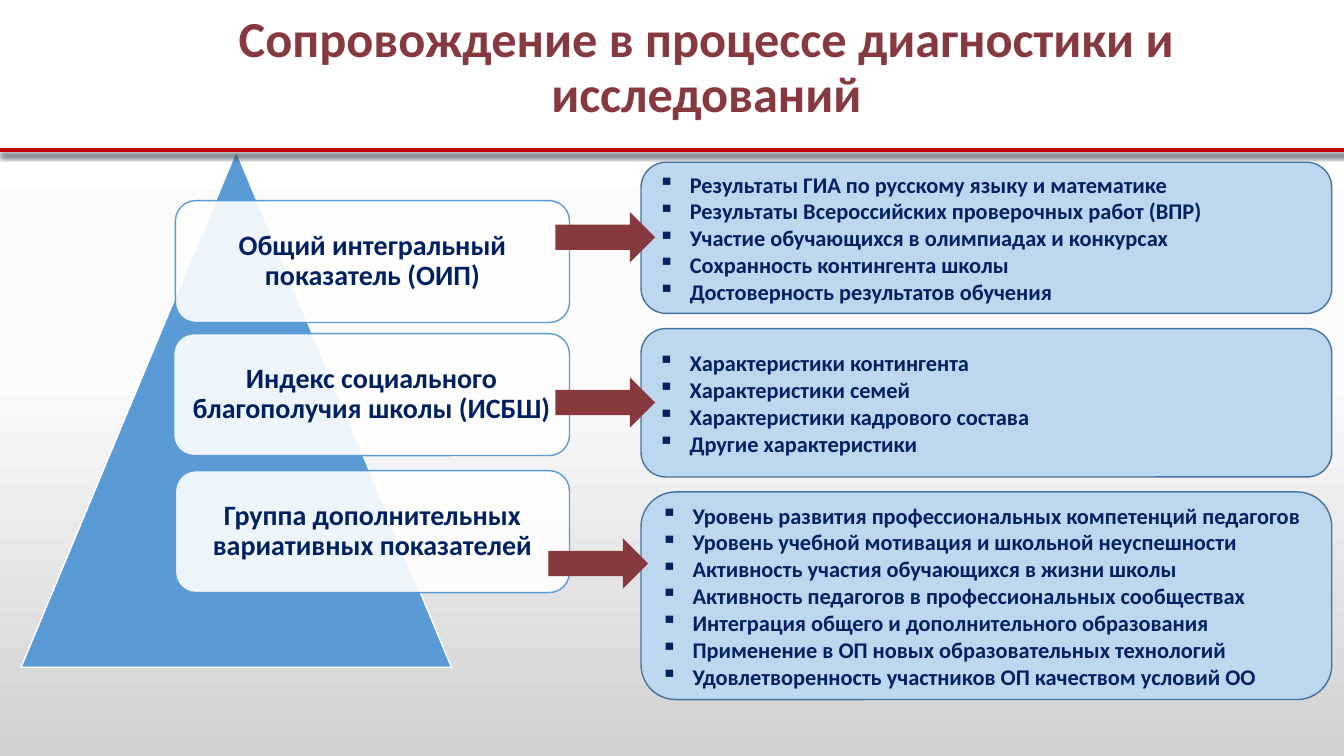
import copy
from dataclasses import dataclass

import pptx
import pptx.dml.color
import pptx.enum.shapes
import pptx.enum.text
import pptx.oxml
import pptx.oxml.ns
import pptx.util

Pt = pptx.util.Pt
SHAPE = pptx.enum.shapes.MSO_SHAPE
ALIGN = pptx.enum.text.PP_ALIGN
rgb = pptx.dml.color.RGBColor.from_string


@dataclass(frozen=True)
class Theme:
    font: str = "Calibri"
    maroon: str = "873940"
    navy: str = "002060"
    blue: str = "5B9BD5"
    white: str = "FFFFFF"
    panel: str = "BDD7EE"
    panel_edge: str = "43739E"
    rule: str = "C00000"
    rule_shadow: str = "333F50"
    backdrop: tuple = ((0, "FFFFFF"), (0.5, "FBFBFB"), (1, "D1D1D1"))
    title_size: int = 36
    card_size: int = 20
    list_size: int = 16


theme = Theme()


def write_text(frame, text, *, size, color, align=ALIGN.LEFT, spacing=1.0, bullet=None):
    """Fill the frame with bold text, one paragraph per line."""
    frame.word_wrap = True
    frame.auto_size = pptx.enum.text.MSO_AUTO_SIZE.NONE
    frame.vertical_anchor = pptx.enum.text.MSO_ANCHOR.MIDDLE
    frame.text = text
    for paragraph in frame.paragraphs:
        paragraph.alignment = align
        paragraph.line_spacing = spacing
        font = paragraph.runs[0].font
        font.name, font.size, font.bold = theme.font, Pt(size), True
        font.color.rgb = rgb(color)
        if bullet:
            properties = paragraph._p.get_or_add_pPr()
            properties.set("marL", str(Pt(22.5)))
            properties.set("indent", str(-Pt(22.5)))
            mark = pptx.oxml.parse_xml(
                f'<a:buChar {pptx.oxml.ns.nsdecls("a")} char="{bullet}"/>')
            properties.append(mark)


def add_figure(kind, left, top, width, height, fill, edge=None):
    figure = slide.shapes.add_shape(kind, Pt(left), Pt(top), Pt(width), Pt(height))
    figure.shadow.inherit = False
    figure.fill.solid()
    figure.fill.fore_color.rgb = rgb(fill)
    if edge:
        figure.line.color.rgb = rgb(edge)
        figure.line.width = Pt(1)
    else:
        figure.line.fill.background()
    return figure


deck = pptx.Presentation()
deck.slide_width, deck.slide_height = Pt(960), Pt(540)
slide = deck.slides.add_slide(deck.slide_layouts[5])

# Background gradient
backdrop = slide.background.fill
backdrop.gradient()
backdrop.gradient_angle = 270
stop_list = slide.element.xpath("//p:bg//a:gsLst")[0]
stop_list.append(copy.deepcopy(stop_list[0]))
for stop, (position, color) in zip(backdrop.gradient_stops, theme.backdrop):
    stop.position = position
    stop.color.rgb = rgb(color)

# Title
title = slide.shapes.title
title.left, title.top, title.width, title.height = Pt(121.7), Pt(13), Pt(766), Pt(72)
write_text(title.text_frame, "Сопровождение в процессе диагностики и исследований",
           size=theme.title_size, color=theme.maroon, align=ALIGN.CENTER, spacing=0.9)

# Pyramid, with an indicator card, an arrow and a detail panel on each level
add_figure(SHAPE.ISOSCELES_TRIANGLE, 15.1, 108, 307.4, 368.6, theme.blue, theme.white)

CARD_RIGHT, CARD_HEIGHT = 406.8, 87.1
levels = [
    # card text, card left, card top, panel top, panel height, arrow left, arrow top, details
    ("Общий интегральный показатель (ОИП)", 125.3, 143.3, 115.9, 108, 396.7, 151.5, [
        "Результаты ГИА по русскому языку и математике",
        "Результаты Всероссийских проверочных работ (ВПР)",
        "Участие обучающихся в олимпиадах и конкурсах",
        "Сохранность контингента школы",
        "Достоверность результатов обучения",
    ]),
    ("Индекс социального благополучия школы (ИСБШ)", 124, 238.3, 234.7, 106, 396.7, 269.5, [
        "Характеристики контингента",
        "Характеристики семей",
        "Характеристики кадрового состава",
        "Другие характеристики",
    ]),
    ("Группа дополнительных вариативных показателей", 125.3, 336.2, 351.4, 148.3, 391.7, 384.5, [
        "Уровень развития профессиональных компетенций педагогов",
        "Уровень учебной мотивация и школьной неуспешности",
        "Активность участия обучающихся в жизни школы",
        "Активность педагогов в профессиональных сообществах",
        "Интеграция общего и дополнительного образования",
        "Применение в ОП новых образовательных технологий",
        "Удовлетворенность участников ОП качеством условий ОО",
    ]),
]
for (indicator, card_left, card_top, panel_top, panel_height,
     arrow_left, arrow_top, details) in levels:
    card = add_figure(SHAPE.ROUNDED_RECTANGLE, card_left, card_top,
                      CARD_RIGHT - card_left, CARD_HEIGHT, theme.white, theme.blue)
    fill_color = card.element.xpath("./p:spPr/a:solidFill/a:srgbClr")[0]
    fill_color.append(pptx.oxml.parse_xml(
        f'<a:alpha {pptx.oxml.ns.nsdecls("a")} val="90000"/>'))
    label = card.text_frame
    label.margin_left = label.margin_right = Pt(6)
    label.margin_top = label.margin_bottom = Pt(6)
    write_text(label, indicator, size=theme.card_size, color=theme.navy,
               align=ALIGN.CENTER, spacing=0.9)

    panel = add_figure(SHAPE.ROUNDED_RECTANGLE, 457.9, panel_top, 493.4, panel_height,
                       theme.panel, theme.panel_edge)
    write_text(panel.text_frame, "\n".join(details), size=theme.list_size,
               color=theme.navy, bullet="▪")

    add_figure(SHAPE.RIGHT_ARROW, arrow_left, arrow_top, 71.3, 36, theme.maroon)

# Rule under the title
rule = slide.shapes.add_connector(pptx.enum.shapes.MSO_CONNECTOR.STRAIGHT,
                                  Pt(0), Pt(107.3), Pt(963.4), Pt(107.3))
rule.line.color.rgb = rgb(theme.rule)
rule.line.width = Pt(2.5)
rule.element.spPr.append(pptx.oxml.parse_xml(
    f'<a:effectLst {pptx.oxml.ns.nsdecls("a")}>'
    f'<a:outerShdw blurRad="{Pt(4)}" dist="{Pt(3)}" dir="5400000" rotWithShape="0">'
    f'<a:srgbClr val="{theme.rule_shadow}"/></a:outerShdw></a:effectLst>'))

deck.save("out.pptx")
